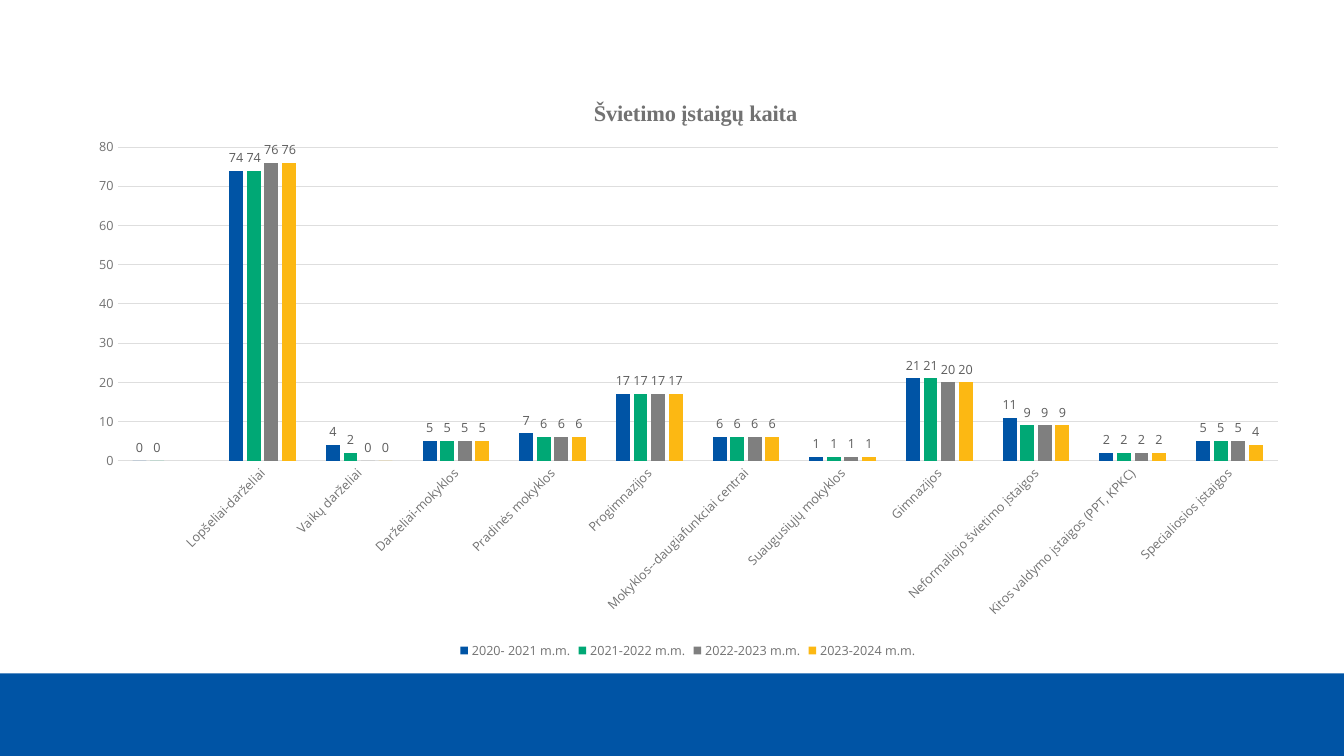
from lxml.etree import SubElement
from pptx import Presentation
from pptx.chart.data import CategoryChartData
from pptx.dml.color import RGBColor
from pptx.enum.chart import XL_CHART_TYPE, XL_LABEL_POSITION, XL_LEGEND_POSITION, XL_TICK_MARK
from pptx.enum.shapes import MSO_SHAPE
from pptx.oxml.ns import qn
from pptx.util import Cm, Pt

BLUE = RGBColor(0x00, 0x54, 0xA5)
GREEN = RGBColor(0x00, 0xA8, 0x75)
GRAY = RGBColor(0x7F, 0x7F, 0x7F)
YELLOW = RGBColor(0xFC, 0xB8, 0x13)
AXIS_TEXT = RGBColor(0x72, 0x72, 0x72)
LABEL_TEXT = RGBColor(0x5C, 0x5C, 0x5C)
DARK = RGBColor(0x26, 0x26, 0x26)
GRID = RGBColor(0xDE, 0xDE, 0xDE)

INSTITUTIONS = [
    "", "Lopšeliai-darželiai", "Vaikų darželiai", "Darželiai-mokyklos",
    "Pradinės mokyklos", "Progimnazijos", "Mokyklos--daugiafunkciai centrai",
    "Suaugusiųjų mokyklos", "Gimnazijos", "Neformaliojo švietimo įstaigos",
    "Kitos valdymo įstaigos (PPT, KPKC)", "Specialiosios įstaigos",
]
SCHOOL_YEARS = [
    ("2020- 2021 m.m.", BLUE, [0, 74, 4, 5, 7, 17, 6, 1, 21, 11, 2, 5]),
    ("2021-2022 m.m.", GREEN, [0, 74, 2, 5, 6, 17, 6, 1, 21, 9, 2, 5]),
    ("2022-2023 m.m.", GRAY, [None, 76, 0, 5, 6, 17, 6, 1, 20, 9, 2, 5]),
    ("2023-2024 m.m.", YELLOW, [None, 76, 0, 5, 6, 17, 6, 1, 20, 9, 2, 4]),
]


def set_font(font, size, color, name="Open Sans"):
    """Set the size, colour and typeface of a font."""
    font.size = Pt(size)
    font.color.rgb = color
    font.name = name


def set_layout(parent, index, **settings):
    """Place a chart part by fractions of the chart area."""
    for old in parent.findall(qn("c:layout")):
        parent.remove(old)
    layout = SubElement(parent, qn("c:layout"))
    parent.insert(index, layout)
    manual = SubElement(layout, qn("c:manualLayout"))
    for tag, value in settings.items():
        SubElement(manual, qn(f"c:{tag}")).set("val", str(value))


def add_footer_band(s, prs):
    """Add the blue band along the bottom edge."""
    top = Cm(16.97)
    band = s.shapes.add_shape(MSO_SHAPE.RECTANGLE, 0, top, prs.slide_width, prs.slide_height - top)
    band.shadow.inherit = False
    band.fill.solid()
    band.fill.fore_color.rgb = BLUE
    band.line.fill.background()


def style_title(chart, text):
    """Write and place the chart title."""
    title = chart.chart_title
    p = title.text_frame.paragraphs[0]
    p.text = text
    r = p.runs[0]
    set_font(r.font, 16, AXIS_TEXT, "Times New Roman")
    r.font.bold = True
    set_layout(title.element, 1, xMode="edge", yMode="edge", x=0.42, y=0.04)


def style_axes(chart):
    """Style both axes, the gridlines and the slanted category names."""
    names, counts = chart.category_axis, chart.value_axis
    for axis in (names, counts):
        axis.major_tick_mark = axis.minor_tick_mark = XL_TICK_MARK.NONE
        set_font(axis.tick_labels.font, 9, AXIS_TEXT)
    names_xml = next(chart.element.iter(qn("c:catAx")))
    names_xml.find(qn("c:txPr")).find(qn("a:bodyPr")).set("rot", "-2700000")
    counts.minimum_scale, counts.maximum_scale, counts.major_unit = 0, 80, 10
    counts.format.line.fill.background()
    for line in (names.format.line, counts.major_gridlines.format.line):
        line.color.rgb = GRID
        line.width = Pt(0.75)


def style_series(series, color):
    """Colour one school year and show its values."""
    series.format.fill.solid()
    series.format.fill.fore_color.rgb = color
    labels = series.data_labels
    labels.show_value = True
    labels.position = XL_LABEL_POSITION.OUTSIDE_END
    set_font(labels.font, 9, LABEL_TEXT)


def add_institution_chart(s):
    """Add the clustered columns of institutions by school year."""
    data = CategoryChartData()
    data.categories = INSTITUTIONS
    for name, _, values in SCHOOL_YEARS:
        data.add_series(name, values)
    chart = s.shapes.add_chart(
        XL_CHART_TYPE.COLUMN_CLUSTERED, Cm(1.88), Cm(1.78), Cm(30.91), Cm(14.94), data
    ).chart
    set_font(chart.font, 10, DARK)
    style_title(chart, "Švietimo įstaigų kaita")
    style_axes(chart)
    chart.has_legend = True
    chart.legend.position = XL_LEGEND_POSITION.BOTTOM
    chart.legend.include_in_layout = False
    set_font(chart.legend.font, 9, AXIS_TEXT)
    plot = chart.plots[0]
    plot.gap_width, plot.overlap = 219, -27
    plot.vary_by_categories = False
    for series, (_, color, _) in zip(plot.series, SCHOOL_YEARS):
        style_series(series, color)
    plot_area = next(chart.element.iter(qn("c:plotArea")))
    set_layout(plot_area, 0, layoutTarget="inner", xMode="edge", yMode="edge",
               x=0.035, y=0.129, w=0.946, h=0.529)


def main():
    """Build and save the slide."""
    prs = Presentation()
    prs.slide_width, prs.slide_height = Cm(33.87), Cm(19.05)
    s = prs.slides.add_slide(prs.slide_layouts[6])
    add_footer_band(s, prs)
    add_institution_chart(s)
    prs.save("out.pptx")


if __name__ == "__main__":
    main()
